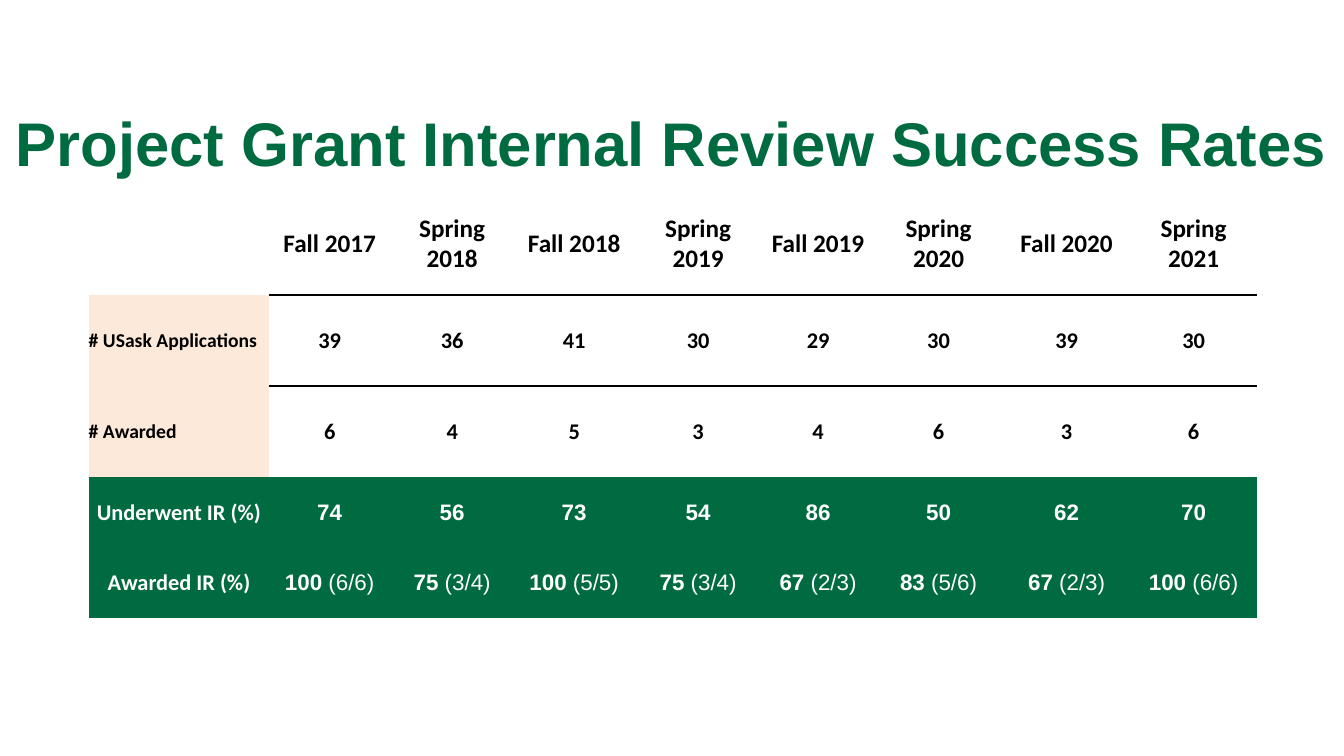
from lxml.etree import SubElement
from pptx import Presentation
from pptx.dml.color import RGBColor
from pptx.enum.text import MSO_ANCHOR as Anchor, PP_ALIGN as Align
from pptx.oxml import parse_xml
from pptx.oxml.ns import nsdecls, qn
from pptx.util import Inches, Pt

GREEN = RGBColor(0x00, 0x6A, 0x40)
PEACH = RGBColor(0xFD, 0xE9, 0xD9)
BLACK = RGBColor(0x00, 0x00, 0x00)
WHITE = RGBColor(0xFF, 0xFF, 0xFF)
NO_GRID_STYLE = "{2D5ABB26-0587-4C30-8999-92F81FD0307C}"

TERMS = [f"{season} {year}" for year in range(2017, 2021) for season in ("Fall",)]
HEADINGS = [
    ["Fall 2017"], ["Spring", "2018"], ["Fall 2018"], ["Spring", "2019"],
    ["Fall 2019"], ["Spring", "2020"], ["Fall 2020"], ["Spring", "2021"],
]
COUNTS = [
    ("# USask Applications", [39, 36, 41, 30, 29, 30, 39, 30]),
    ("# Awarded", [6, 4, 5, 3, 4, 6, 3, 6]),
]
REVIEWED = [74, 56, 73, 54, 86, 50, 62, 70]
AWARDED = [
    (100, "6/6"), (75, "3/4"), (100, "5/5"), (75, "3/4"),
    (67, "2/3"), (83, "5/6"), (67, "2/3"), (100, "6/6"),
]
COLUMN_WIDTHS = [1.79, 1.2, 1.23, 1.19, 1.27, 1.11, 1.28, 1.26, 1.26]
ROW_HEIGHTS = [1.03, 0.9, 0.9, 0.7, 0.7]


def add_run(paragraph, text, size, color, font="Calibri", bold=True):
    run = paragraph.add_run()
    run.text = text
    run.font.name = font
    run.font.size = Pt(size)
    run.font.bold = bold
    run.font.color.rgb = color


def add_title(slide, text):
    title = slide.shapes.add_textbox(Inches(0), Inches(0.92), Inches(13.33), Inches(0.82))
    frame = title.text_frame
    frame.word_wrap = True
    frame.margin_left = frame.margin_right = frame.margin_bottom = 0
    frame.margin_top = Inches(0.12)
    frame.paragraphs[0].alignment = Align.CENTER
    add_run(frame.paragraphs[0], text, 44, GREEN, "Arial")


def prepare_cell(cell, fill=None, align=Align.CENTER):
    cell.vertical_anchor = Anchor.MIDDLE
    cell.margin_left = cell.margin_right = cell.margin_bottom = 0
    cell.margin_top = Inches(0.01)
    if fill is None:
        cell.fill.background()
    else:
        cell.fill.solid()
        cell.fill.fore_color.rgb = fill
    cell.text_frame.paragraphs[0].alignment = align
    return cell.text_frame.paragraphs[0]


def add_rule(cell, edge):
    rule = parse_xml(
        f'<a:{edge} {nsdecls("a")} w="{Pt(1.5)}"><a:solidFill>'
        f'<a:srgbClr val="{BLACK}"/></a:solidFill></a:{edge}>'
    )
    cell._tc.get_or_add_tcPr().insert(0, rule)


def add_grid(slide):
    frame = slide.shapes.add_table(
        len(ROW_HEIGHTS), len(COLUMN_WIDTHS), Inches(0.88), Inches(1.9),
        Inches(sum(COLUMN_WIDTHS)), Inches(sum(ROW_HEIGHTS)),
    )
    grid = frame.table
    grid.first_row = grid.horz_banding = False
    properties = grid._tbl.tblPr
    style = properties.find(qn("a:tableStyleId"))
    if style is None:
        style = SubElement(properties, qn("a:tableStyleId"))
    style.text = NO_GRID_STYLE
    for column, width in zip(grid.columns, COLUMN_WIDTHS):
        column.width = Inches(width)
    for row, height in zip(grid.rows, ROW_HEIGHTS):
        row.height = Inches(height)
    return grid


def fill_headings(grid):
    prepare_cell(grid.cell(0, 0))
    for column, lines in enumerate(HEADINGS, 1):
        cell = grid.cell(0, column)
        paragraph = prepare_cell(cell, WHITE)
        add_run(paragraph, lines[0], 18, BLACK)
        for line in lines[1:]:
            paragraph = cell.text_frame.add_paragraph()
            paragraph.alignment = Align.CENTER
            add_run(paragraph, line, 18, BLACK)
        add_rule(cell, "lnB")
        add_rule(grid.cell(1, column), "lnT")


def fill_counts(grid):
    for row, (label, counts) in enumerate(COUNTS, 1):
        add_run(prepare_cell(grid.cell(row, 0), PEACH, Align.LEFT), label, 14, BLACK)
        for column, count in enumerate(counts, 1):
            add_run(prepare_cell(grid.cell(row, column)), str(count), 16, BLACK)


def fill_rates(grid):
    for row, label in enumerate(["Underwent IR (%)", "Awarded IR (%)"], 3):
        add_run(prepare_cell(grid.cell(row, 0), GREEN), label, 16, WHITE)
    for column, (reviewed, (rate, ratio)) in enumerate(zip(REVIEWED, AWARDED), 1):
        add_run(prepare_cell(grid.cell(3, column), GREEN), str(reviewed), 16, WHITE, "Arial")
        awarded = prepare_cell(grid.cell(4, column), GREEN)
        add_run(awarded, f"{rate} ", 16, WHITE, "Arial")
        add_run(awarded, f"({ratio})", 16, WHITE, "Arial", bold=False)


def main():
    deck = Presentation()
    deck.slide_width = Inches(13.33)
    deck.slide_height = Inches(7.5)
    slide = deck.slides.add_slide(deck.slide_layouts[6])
    add_title(slide, "Project Grant Internal Review Success Rates")
    grid = add_grid(slide)
    fill_headings(grid)
    fill_counts(grid)
    fill_rates(grid)
    deck.save("out.pptx")


if __name__ == "__main__":
    main()
